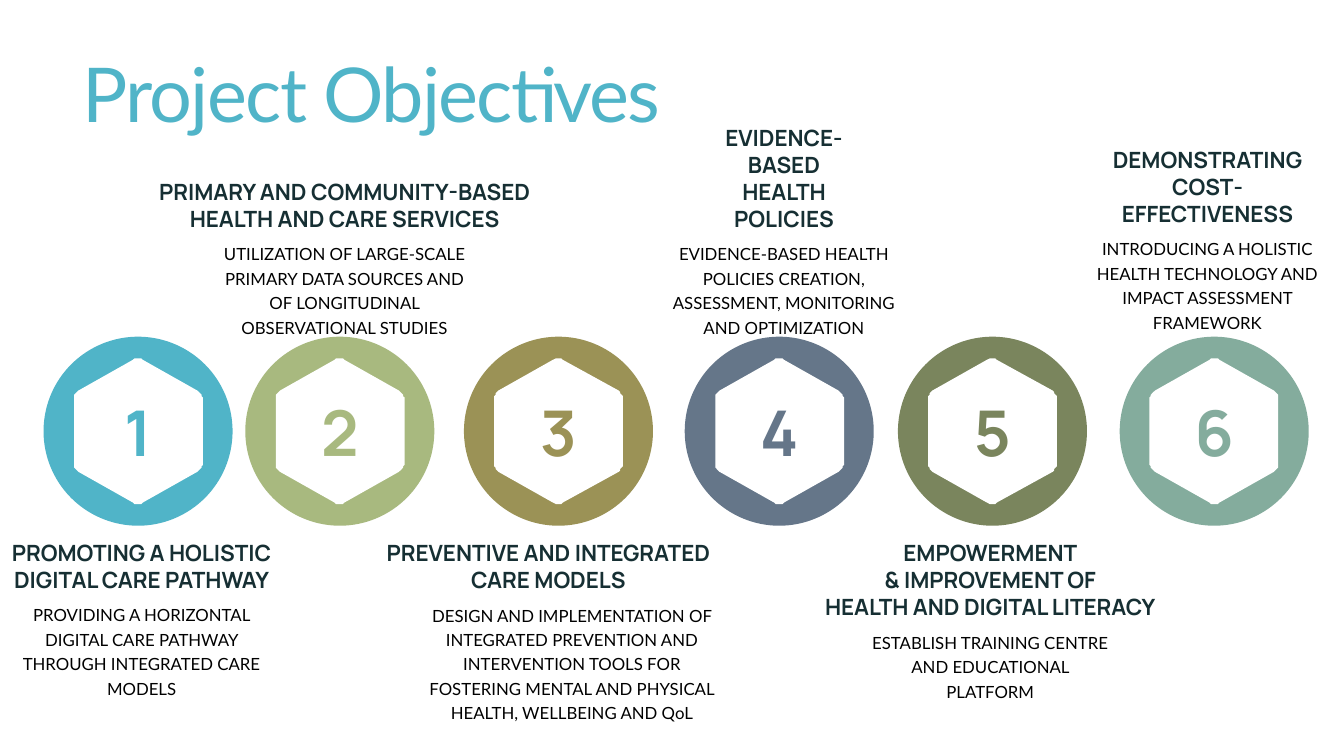
import math
from collections import namedtuple

from pptx import Presentation
from pptx import util as u
from pptx.dml.color import RGBColor
from pptx.enum import shapes, text

BADGE_Y = 308
CIRCLE_SIZE = 135
HEXAGON_RADIUS = 53.2
CORNER_CUT = 4
BODY_WIDTH = 185

Objective = namedtuple(
    "Objective", "badge_x colour text_x top heading body_x body_width body lines")

OBJECTIVES = [
    Objective(98.6, "50B4C8", 101.2, 381,
              ["PROMOTING A HOLISTIC", "DIGITAL CARE PATHWAY"], 101.2, BODY_WIDTH,
              "PROVIDING A HORIZONTAL DIGITAL CARE PATHWAY THROUGH INTEGRATED CARE MODELS", 4),
    Objective(242.7, "A8B97F", 246.2, 123,
              ["PRIMARY AND COMMUNITY-BASED", "HEALTH AND CARE SERVICES"], 246.2, BODY_WIDTH,
              "UTILIZATION OF LARGE-SCALE PRIMARY DATA SOURCES AND OF LONGITUDINAL "
              "OBSERVATIONAL STUDIES", 4),
    Objective(398.9, "9B9256", 391.7, 381,
              ["PREVENTIVE AND INTEGRATED", "CARE MODELS"], 408.6, 219.6,
              "DESIGN AND IMPLEMENTATION OF INTEGRATED PREVENTION AND INTERVENTION TOOLS "
              "FOR FOSTERING MENTAL AND PHYSICAL HEALTH, WELLBEING AND QoL", 5),
    Objective(556.6, "657689", 560, 123,
              ["EVIDENCE-BASED", "HEALTH POLICIES"], 560, BODY_WIDTH,
              "EVIDENCE-BASED HEALTH POLICIES CREATION, ASSESSMENT, MONITORING "
              "AND OPTIMIZATION", 4),
    Objective(708.9, "7A855D", 707.4, 381,
              ["EMPOWERMENT", "& IMPROVEMENT OF", "HEALTH AND DIGITAL LITERACY"],
              707.4, BODY_WIDTH,
              "ESTABLISH TRAINING CENTRE AND EDUCATIONAL PLATFORM", 3),
    Objective(867.3, "84AC9D", 862.5, 119.5,
              ["DEMONSTRATING", "COST-EFFECTIVENESS"], 862.5, BODY_WIDTH,
              "INTRODUCING A HOLISTIC HEALTH TECHNOLOGY AND IMPACT ASSESSMENT FRAMEWORK", 4),
]


def colour_of(hex_string):
    return RGBColor.from_string(hex_string)


def set_all(target, values):
    for name, value in values.items():
        setattr(target, name, value)


def paint(shape, colour):
    shape.shadow.inherit = False
    shape.fill.solid()
    shape.fill.fore_color.rgb = colour_of(colour)
    shape.line.fill.background()


def add_text(page, place, lines, colour, font, frame=None, para_format=None):
    """Write one paragraph per line in a box at place (left, top, width, height)."""
    box = page.shapes.add_textbox(*map(u.Pt, place))
    set_all(box.text_frame, {"word_wrap": True, **(frame or {})})
    for index, line in enumerate(lines):
        para = box.text_frame.add_paragraph() if index else box.text_frame.paragraphs[0]
        set_all(para, para_format or {})
        span = para.add_run()
        span.text = line
        set_all(span.font, font)
        span.font.color.rgb = colour_of(colour)
    return box


def add_circle(page, x, colour):
    left, top = x - CIRCLE_SIZE / 2, BADGE_Y - CIRCLE_SIZE / 2
    circle = page.shapes.add_shape(
        shapes.MSO_SHAPE.OVAL, *map(u.Pt, (left, top, CIRCLE_SIZE, CIRCLE_SIZE)))
    paint(circle, colour)


def hexagon_points(x, y):
    """Outline of an upright hexagon, each corner softened by a quadratic curve."""
    corners = [(x + HEXAGON_RADIUS * math.sin(math.radians(angle)),
                y - HEXAGON_RADIUS * math.cos(math.radians(angle)))
               for angle in range(0, 360, 60)]
    share = CORNER_CUT / HEXAGON_RADIUS
    points = []
    for index, corner in enumerate(corners):
        before, after = corners[index - 1], corners[(index + 1) % 6]
        for step in range(7):
            t = step / 6
            points.append(tuple(
                c + share * ((1 - t) ** 2 * (b - c) + t ** 2 * (a - c))
                for b, c, a in zip(before, corner, after)))
    return points


def add_hexagon(page, x):
    points = hexagon_points(x, BADGE_Y)
    outline = page.shapes.build_freeform(*points[0], scale=u.Pt(1))
    outline.add_line_segments(points[1:], close=True)
    paint(outline.convert_to_shape(), "FFFFFF")


def add_badge(page, number, objective):
    add_circle(page, objective.badge_x, objective.colour)
    add_hexagon(page, objective.badge_x)
    add_text(page, (objective.badge_x - 22, BADGE_Y - 31, 44, 62), [str(number)],
             objective.colour,
             {"name": "Manrope", "size": u.Pt(45), "bold": True},
             {"word_wrap": False, "vertical_anchor": text.MSO_ANCHOR.MIDDLE},
             {"alignment": text.PP_ALIGN.CENTER})


def add_description(page, objective):
    heading_width = 13 * max(map(len, objective.heading)) - 50
    heading_height = 7.2 + 19.4 * len(objective.heading)
    add_text(page,
             (objective.text_x - heading_width / 2, objective.top,
              heading_width, heading_height),
             objective.heading, "162F33",
             {"name": "Manrope", "size": u.Pt(16), "bold": True},
             {"word_wrap": False, "vertical_anchor": text.MSO_ANCHOR.BOTTOM,
              "auto_size": text.MSO_AUTO_SIZE.SHAPE_TO_FIT_TEXT},
             {"alignment": text.PP_ALIGN.CENTER})
    add_text(page,
             (objective.body_x - objective.body_width / 2, objective.top + heading_height,
              objective.body_width, 17.5 * objective.lines + 4.4),
             [objective.body], "000000",
             {"name": "Lato", "size": u.Pt(12)},
             {"margin_left": u.Pt(3.6), "margin_right": u.Pt(3.6),
              "margin_top": u.Pt(2.2), "margin_bottom": u.Pt(2.2),
              "auto_size": text.MSO_AUTO_SIZE.SHAPE_TO_FIT_TEXT},
             {"alignment": text.PP_ALIGN.CENTER, "line_spacing": u.Pt(17.5)})


def add_title(page):
    box = add_text(page, (51.8, 39.6, 848, 73.4), ["Project Objectives"], "50B4C8",
                   {"name": "Lato", "size": u.Pt(54)}, None, {"line_spacing": 0.85})
    span = box.text_frame.paragraphs[0].runs[0]
    span.font._element.set("spc", "-120")


def main():
    deck = Presentation()
    set_all(deck, {"slide_width": u.Pt(960), "slide_height": u.Pt(540)})
    page = deck.slides.add_slide(deck.slide_layouts[6])
    add_title(page)
    for number, objective in enumerate(OBJECTIVES, 1):
        add_badge(page, number, objective)
        add_description(page, objective)
    deck.save("out.pptx")


if __name__ == "__main__":
    main()
